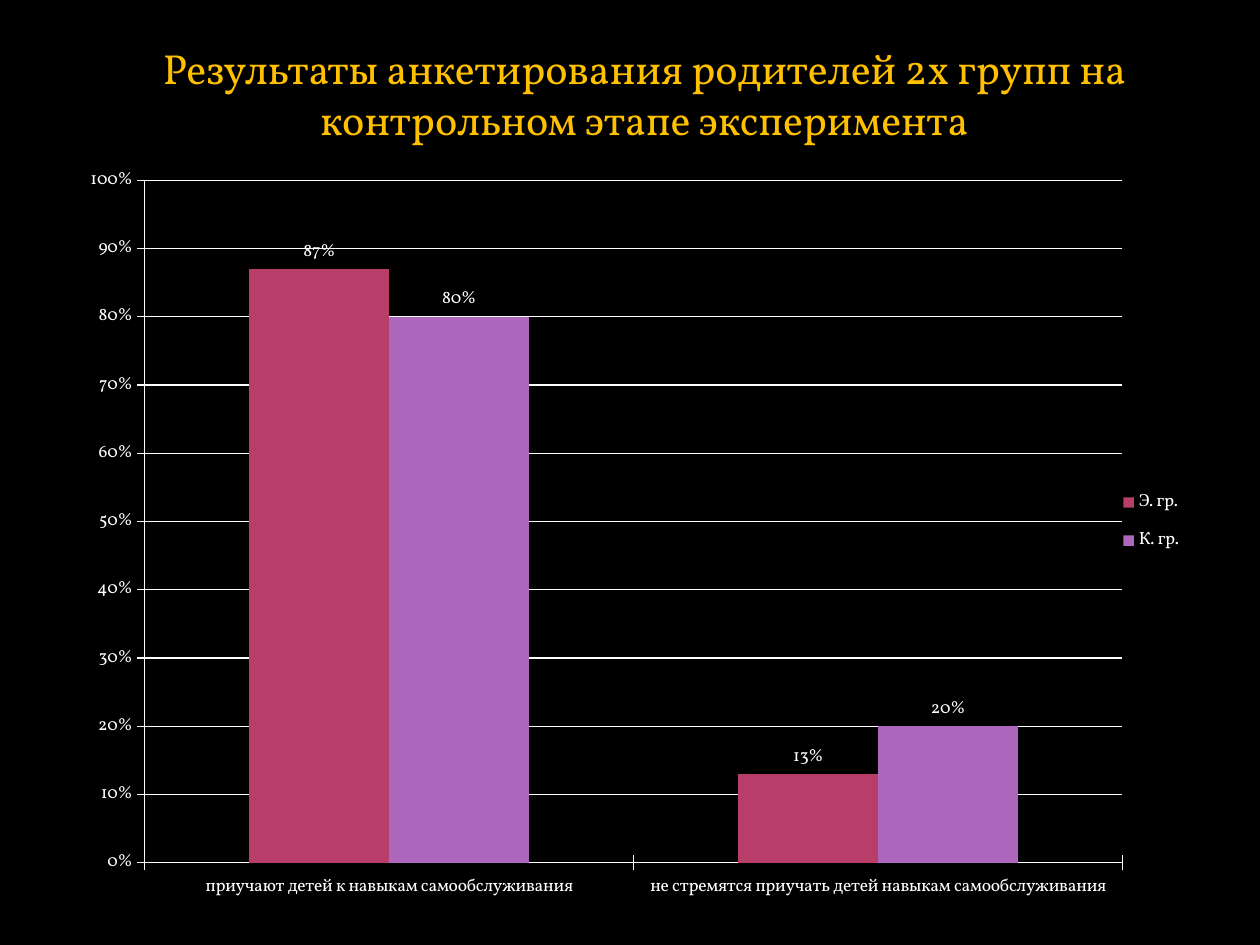
import pptx
import pptx.chart.data
import pptx.dml.color
import pptx.enum.chart
import pptx.enum.text
import pptx.oxml
import pptx.oxml.ns
import pptx.util

Inches = pptx.util.Inches
Pt = pptx.util.Pt
RGBColor = pptx.dml.color.RGBColor

BLACK = RGBColor(0x00, 0x00, 0x00)
WHITE = RGBColor(0xFF, 0xFF, 0xFF)
GOLD = RGBColor(0xFF, 0xC0, 0x00)
CRIMSON = RGBColor(0xB8, 0x3D, 0x68)
PURPLE = RGBColor(0xAC, 0x66, 0xBB)


class SlideBuilder:
    typeface = "Vollkorn"
    percent = "0%"

    def __init__(self, page):
        self.page = page
        page.background.fill.solid()
        page.background.fill.fore_color.rgb = BLACK

    def style_font(self, font, size, color):
        font.name = self.typeface
        font.size = Pt(size)
        font.color.rgb = color

    def title(self, text, left, top, width, height):
        box = self.page.shapes.add_textbox(
            Inches(left), Inches(top), Inches(width), Inches(height))
        frame = box.text_frame
        frame.word_wrap = True
        frame.auto_size = pptx.enum.text.MSO_AUTO_SIZE.SHAPE_TO_FIT_TEXT
        para = frame.paragraphs[0]
        para.text = text
        para.alignment = pptx.enum.text.PP_ALIGN.CENTER
        self.style_font(para.font, 24, GOLD)

    def column_chart(self, categories, groups, left, top, width, height):
        data = pptx.chart.data.CategoryChartData(number_format=self.percent)
        data.categories = categories
        for name, values, color in groups:
            data.add_series(name, values)
        chart = self.page.shapes.add_chart(
            pptx.enum.chart.XL_CHART_TYPE.COLUMN_CLUSTERED,
            Inches(left), Inches(top), Inches(width), Inches(height), data).chart
        chart.has_title = False
        self.style_font(chart.font, 10, WHITE)
        plot = chart.plots[0]
        plot.gap_width = 150
        plot.overlap = 0
        plot.vary_by_categories = False
        for series, (name, values, color) in zip(plot.series, groups):
            self.series(series, color)
        self.axes(chart)
        self.legend(chart)
        self.place(chart._chartSpace.chart.plotArea, 0.07, 0.04, 0.85, 0.9, inner=True)

    def series(self, series, color):
        series.format.fill.solid()
        series.format.fill.fore_color.rgb = color
        series.invert_if_negative = False
        labels = series.data_labels
        labels.show_value = True
        labels.number_format = self.percent
        labels.number_format_is_linked = False
        labels.position = pptx.enum.chart.XL_LABEL_POSITION.OUTSIDE_END
        self.style_font(labels.font, 10, WHITE)

    def axes(self, chart):
        for axis in (chart.category_axis, chart.value_axis):
            axis.major_tick_mark = pptx.enum.chart.XL_TICK_MARK.CROSS
            axis.format.line.color.rgb = WHITE
            self.style_font(axis.tick_labels.font, 10, WHITE)
        scale = chart.value_axis
        scale.minimum_scale = 0
        scale.maximum_scale = 1
        scale.major_unit = 0.1
        scale.has_major_gridlines = True
        scale.major_gridlines.format.line.color.rgb = WHITE
        scale.tick_labels.number_format = self.percent
        scale.tick_labels.number_format_is_linked = False

    def legend(self, chart):
        chart.has_legend = True
        legend = chart.legend
        legend.position = pptx.enum.chart.XL_LEGEND_POSITION.RIGHT
        legend.include_in_layout = False
        self.style_font(legend.font, 10, WHITE)
        self.place(legend._element, 0.91, 0.43, 0.07, 0.12)

    def place(self, element, left, top, width, height, inner=False):
        for layout in element.findall(pptx.oxml.ns.qn("c:layout")):
            element.remove(layout)
        target = '<c:layoutTarget val="inner"/>' if inner else ""
        layout = pptx.oxml.parse_xml(
            f'<c:layout {pptx.oxml.ns.nsdecls("c")}><c:manualLayout>{target}'
            '<c:xMode val="edge"/><c:yMode val="edge"/>'
            f'<c:x val="{left}"/><c:y val="{top}"/>'
            f'<c:w val="{width}"/><c:h val="{height}"/>'
            '</c:manualLayout></c:layout>')
        element.insert(0 if inner else 1, layout)


def main():
    deck = pptx.Presentation()
    deck.slide_width = Inches(10)
    deck.slide_height = Inches(7.5)
    builder = SlideBuilder(deck.slides.add_slide(deck.slide_layouts[6]))
    builder.title(
        "Результаты анкетирования родителей 2х групп на контрольном этапе эксперимента",
        0.35, 0.29, 9.53, 0.91)
    builder.column_chart(
        ["приучают детей к навыкам самообслуживания",
         "не стремятся приучать детей навыкам самообслуживания"],
        [("Э. гр.", (0.87, 0.13), CRIMSON), ("К. гр.", (0.8, 0.2), PURPLE)],
        0.51, 1.19, 9.13, 6.02)
    deck.save("out.pptx")


if __name__ == "__main__":
    main()
